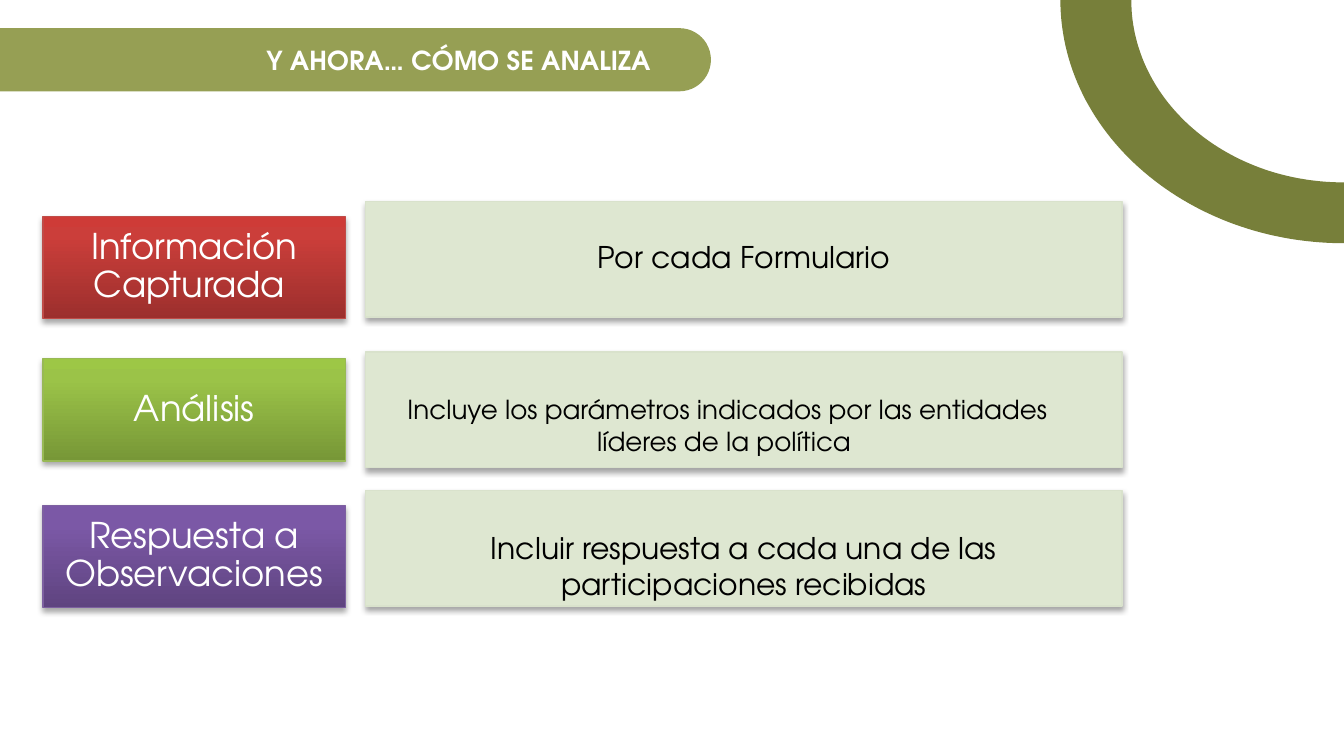
from lxml import etree
from pptx import Presentation
from pptx.dml.color import RGBColor
from pptx.enum.shapes import MSO_SHAPE
from pptx.enum.text import MSO_ANCHOR, PP_ALIGN
from pptx.oxml.ns import qn
from pptx.util import Inches, Pt

RECTANGLE, ROUNDED = MSO_SHAPE.RECTANGLE, MSO_SHAPE.ROUNDED_RECTANGLE
TOP, MIDDLE = MSO_ANCHOR.TOP, MSO_ANCHOR.MIDDLE
CENTER, RIGHT = PP_ALIGN.CENTER, PP_ALIGN.RIGHT
FONT = "TeX Gyre Adventor"
TITLE_ONLY = 5

COLORS = {
    "arc": "777F3A", "banner": "969F54", "white": "FFFFFF", "black": "000000",
    "panel": "DEE7D1", "panel_line": "D9E2CC",
    "red_low": "9C2F2D", "red_mid": "CB3E3A", "red_high": "CE3B37", "red_line": "BF4C48",
    "green_low": "779737", "green_mid": "9BC348", "green_high": "9DC746", "green_line": "98B955",
    "purple_low": "5F4480", "purple_mid": "7B58A6", "purple_high": "7C57A8", "purple_line": "7D60A0",
}

ROWS = [
    {"label": "Información Capturada ", "hue": "red", "label_top": 1.61, "panel_top": 1.5,
     "detail": "Por cada Formulario", "size": 16, "offset": (0.12, 0.23)},
    {"label": "Análisis", "hue": "green", "label_top": 2.67, "panel_top": 2.62,
     "detail": "Incluye los parámetros indicados por las entidades líderes de la política ",
     "size": 14, "offset": (0, 0.26)},
    {"label": "Respuesta a Observaciones", "hue": "purple", "label_top": 3.76, "panel_top": 3.65,
     "detail": "Incluir respuesta a cada una de las participaciones recibidas",
     "size": 16, "offset": (0.12, 0.24)},
]


def rgb(name):
    return RGBColor.from_string(COLORS[name])


def write(shape, text, size=16, color="black", bold=False, align=CENTER, anchor=TOP,
          insets=(0.1, 0.05, 0.1, 0.05), spacing=1.0):
    frame = shape.text_frame
    frame.word_wrap = True
    frame.vertical_anchor = anchor
    frame.margin_left, frame.margin_top, frame.margin_right, frame.margin_bottom = map(Inches, insets)
    para = frame.paragraphs[0]
    para.alignment = align
    para.line_spacing = spacing
    span = para.add_run()
    span.text = text
    span.font.name = FONT
    span.font.size = Pt(size)
    span.font.bold = bold
    span.font.color.rgb = rgb(color)


def add_box(page, kind, box, fill, line=None):
    shape = page.shapes.add_shape(kind, *map(Inches, box))
    shape.shadow.inherit = False
    shape.fill.solid()
    shape.fill.fore_color.rgb = rgb(fill)
    if line:
        shape.line.color.rgb = rgb(line)
        shape.line.width = Pt(0.75)
    else:
        shape.line.fill.background()
    return shape


def add_color(parent, name, alpha=None):
    color = etree.SubElement(parent, qn("a:srgbClr"), val=COLORS[name])
    if alpha:
        etree.SubElement(color, qn("a:alpha"), val=str(alpha * 1000))


def add_shadow(shape):
    effects = shape.element.spPr.find(qn("a:effectLst"))
    shadow = etree.SubElement(effects, qn("a:outerShdw"), blurRad=str(Pt(3.1)),
                              dist=str(Pt(1.8)), dir="5400000", rotWithShape="0")
    add_color(shadow, "black", 35)


def shade(shape, hue):
    shape.fill.gradient()
    shape.fill.gradient_angle = 90
    stops = shape.element.spPr.find(".//" + qn("a:gsLst"))
    for stop in list(stops):
        stops.remove(stop)
    for position, tone in ((0, "low"), (80, "mid"), (100, "high")):
        stop = etree.SubElement(stops, qn("a:gs"), pos=str(position * 1000))
        add_color(stop, f"{hue}_{tone}")


def bezier(start, first, second, end, steps=60):
    for step in range(steps + 1):
        t = step / steps
        weights = ((1 - t) ** 3, 3 * t * (1 - t) ** 2, 3 * t * t * (1 - t), t ** 3)
        yield tuple(sum(w * p[axis] for w, p in zip(weights, (start, first, second, end)))
                    for axis in (0, 1))


def add_corner_arc(page, left, top, width, height):
    def place(x, y):
        return left + x * width, top + y * height

    inner = bezier(place(0.25, 0), place(0.25, 0.41), place(0.58, 0.75), place(1, 0.75))
    outer = bezier(place(1, 1), place(0.45, 1), place(0, 0.55), place(0, 0))
    points = [(Inches(x), Inches(y)) for x, y in (*inner, *outer)]
    builder = page.shapes.build_freeform(*points[0])
    builder.add_line_segments(points[1:], close=True)
    arc = builder.convert_to_shape()
    arc.shadow.inherit = False
    arc.fill.solid()
    arc.fill.fore_color.rgb = rgb("arc")
    arc.line.fill.background()


def add_title_banner(page, left, top, width, height):
    banner = add_box(page, ROUNDED, (left, top, width, height), "banner")
    banner.adjustments[0] = 0.5
    title = page.shapes.title
    title.left, title.top, title.width, title.height = map(Inches, (left, top, width, height))
    write(title, "Y AHORA… CÓMO SE ANALIZA ", size=14, color="white", bold=True,
          align=RIGHT, anchor=MIDDLE, insets=(0.1, 0.05, 0.39, 0.05))
    banner.element.addnext(title.element)


def add_label(page, row, left, top, width, height):
    label = add_box(page, RECTANGLE, (left, top, width, height),
                    f"{row['hue']}_mid", f"{row['hue']}_line")
    shade(label, row["hue"])
    add_shadow(label)
    write(label, row["label"], size=19, color="white", anchor=MIDDLE,
          insets=(0.15, 0.08, 0.15, 0.08), spacing=0.9)


def add_detail(page, row, left, top, width, height):
    panel = add_box(page, RECTANGLE, (left, top, width, height), "panel", "panel_line")
    add_shadow(panel)
    shift, drop = row["offset"]
    detail = page.shapes.add_textbox(*map(Inches, (left + shift, top + drop, width - 0.24, height - drop)))
    write(detail, row["detail"], size=row["size"])


def main():
    deck = Presentation()
    deck.slide_width = Inches(10)
    deck.slide_height = deck.slide_width * 9 // 16
    page = deck.slides.add_slide(deck.slide_layouts[TITLE_ONLY])
    add_corner_arc(page, 7.89, 0, 2.11, 1.81)
    add_title_banner(page, -0.29, 0.21, 5.58, 0.47)
    for row in ROWS:
        add_label(page, row, 0.32, row["label_top"], 2.25, 0.76)
        add_detail(page, row, 2.72, row["panel_top"], 5.63, 0.86)
    deck.save("out.pptx")


if __name__ == "__main__":
    main()
